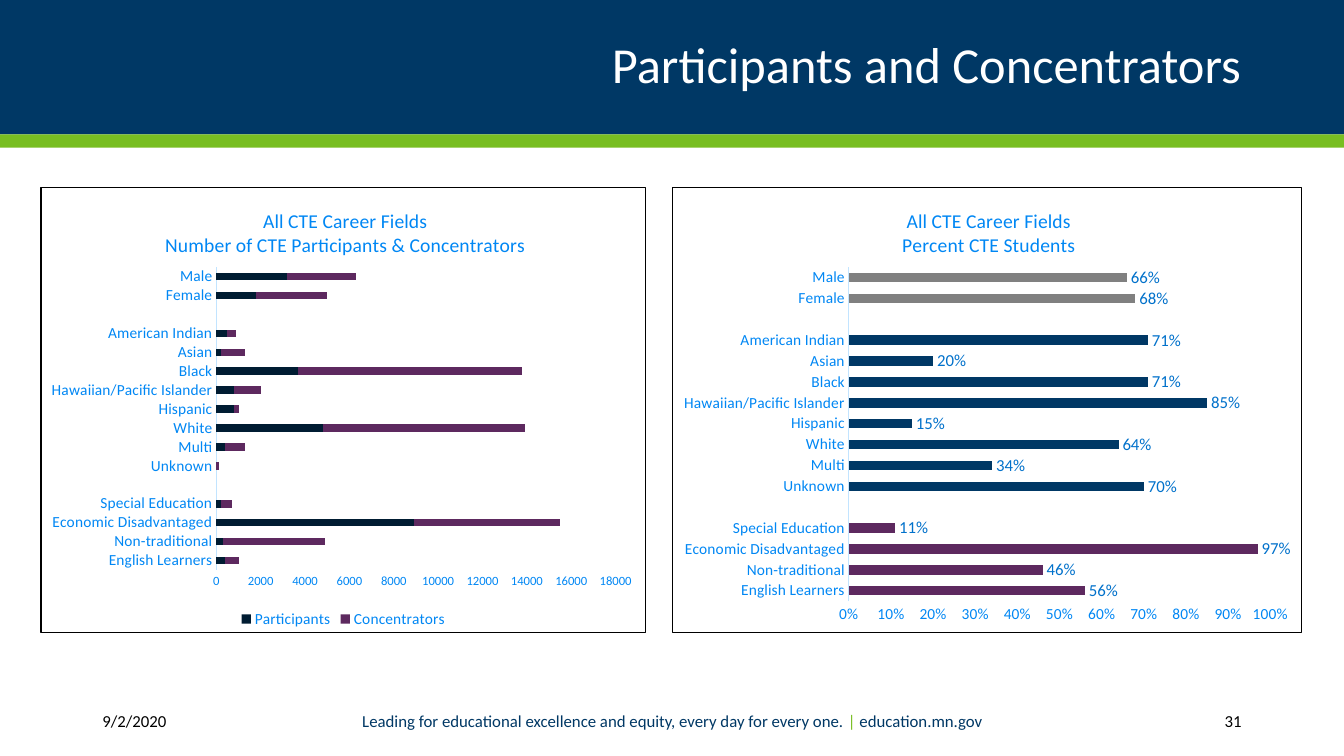
"""Build the slide on career and technical education participants and concentrators."""
import pptx
import pptx.chart.data
import pptx.dml.color
import pptx.enum.chart
import pptx.enum.shapes
import pptx.enum.text
import pptx.oxml
import pptx.oxml.ns
import pptx.util

Cm, Pt = pptx.util.Cm, pptx.util.Pt
Align = pptx.enum.text.PP_ALIGN
ChartType = pptx.enum.chart.XL_CHART_TYPE
qn = pptx.oxml.ns.qn

FONT = "Calibri"
COLORS = {
    "navy": "003865", "green": "78BE21", "white": "FFFFFF", "black": "000000",
    "ink": "001C32", "purple": "5D295F", "gray": "808080",
    "label": "0087F4", "value": "0071CB", "axis": "C2E4FF",
}
CATEGORIES = [
    "English Learners", "Non-traditional", "Economic Disadvantaged", "Special Education", "",
    "Unknown", "Multi", "White", "Hispanic", "Hawaiian/Pacific Islander", "Black", "Asian",
    "American Indian", "", "Female", "Male",
]
COUNTS = {
    "Participants": [400, 300, 8900, 200, None, 0, 400, 4800, 800, 800, 3700, 200, 500,
                     None, 1800, 3200],
    "Concentrators": [600, 4600, 6600, 500, None, 100, 900, 9100, 200, 1200, 10100, 1100, 400,
                      None, 3200, 3100],
}
PERCENTS = {
    "Series 1": [0.56, 0.46, 0.97, 0.11, None, 0.7, 0.34, 0.64, 0.15, 0.85, 0.71, 0.2, 0.71,
                 None, 0.68, 0.66],
}
POINT_COLORS = {0: "purple", 1: "purple", 2: "purple", 3: "purple", 14: "gray", 15: "gray"}


def rgb(name):
    """Return the named colour."""
    return pptx.dml.color.RGBColor.from_string(COLORS[name])


def paint(fill, color):
    """Give a fill one solid colour."""
    fill.solid()
    fill.fore_color.rgb = rgb(color)


def set_font(font, size, color):
    """Set typeface, size and colour."""
    font.name, font.size, font.bold = FONT, Pt(size), False
    font.color.rgb = rgb(color)


def add_run(p, text, size, color):
    """Add one formatted run to a paragraph."""
    r = p.add_run()
    r.text = text
    set_font(r.font, size, color)


def add_band(s, top, height, color):
    """Add a full-width colour band."""
    sp = s.shapes.add_shape(pptx.enum.shapes.MSO_SHAPE.RECTANGLE,
                            0, Cm(top), Cm(33.87), Cm(height))
    paint(sp.fill, color)
    sp.line.fill.background()
    sp.shadow.inherit = False


def fill_title(s, text):
    """Place and format the title in front of the bands."""
    sp = s.shapes.title
    sp.left, sp.top, sp.width, sp.height = Cm(2.33), Cm(0.42), Cm(29.21), Cm(2.54)
    sp.element.getparent().append(sp.element)
    sp.text_frame.vertical_anchor = pptx.enum.text.MSO_ANCHOR.MIDDLE
    p = sp.text_frame.paragraphs[0]
    p.alignment, p.line_spacing = Align.RIGHT, 0.9
    add_run(p, text, 36, "white")


def add_footer(s, left, width, align, runs):
    """Add one footer text of coloured runs."""
    sp = s.shapes.add_textbox(Cm(left), Cm(17.65), Cm(width), Cm(1.02))
    tf = sp.text_frame
    tf.word_wrap = True
    tf.vertical_anchor = pptx.enum.text.MSO_ANCHOR.MIDDLE
    p = tf.paragraphs[0]
    p.alignment = align
    for text, color in runs:
        add_run(p, text, 12, color)


def set_layout(parent, index, inner=False, **fractions):
    """Fix the place of a chart part as fractions of the chart."""
    for old in parent.findall(qn("c:layout")):
        parent.remove(old)
    target = '<c:layoutTarget val="inner"/>' if inner else ""
    modes = "".join(f'<c:{k}Mode val="edge"/>' for k in ("x", "y"))
    sizes = "".join(f'<c:{k} val="{v}"/>' for k, v in fractions.items())
    parent.insert(index, pptx.oxml.parse_xml(
        f'<c:layout {pptx.oxml.ns.nsdecls("c")}><c:manualLayout>'
        f'{target}{modes}{sizes}</c:manualLayout></c:layout>'))


def add_border(chart):
    """Frame the chart with a thin black line."""
    chart.element.find(qn("c:chart")).addnext(pptx.oxml.parse_xml(
        f'<c:spPr {pptx.oxml.ns.nsdecls("c", "a")}><a:noFill/><a:ln w="9525"><a:solidFill>'
        f'<a:srgbClr val="{COLORS["black"]}"/></a:solidFill></a:ln></c:spPr>'))


def format_axes(chart, value_size):
    """Format both axes without ticks or gridlines."""
    for axis, size in ((chart.category_axis, 11), (chart.value_axis, value_size)):
        axis.has_major_gridlines = False
        axis.major_tick_mark = axis.minor_tick_mark = pptx.enum.chart.XL_TICK_MARK.NONE
        set_font(axis.tick_labels.font, size, "label")
    line = chart.category_axis.format.line
    line.color.rgb, line.width = rgb("axis"), Pt(0.75)
    chart.value_axis.format.line.fill.background()


def add_bars(s, kind, left, width, title, title_x, plot, data, colors, gap, value_size):
    """Add a framed bar chart and return it."""
    cd = pptx.chart.data.CategoryChartData()
    cd.categories = CATEGORIES
    for name, values in data.items():
        cd.add_series(name, values)
    chart = s.shapes.add_chart(kind, Cm(left), Cm(4.7), Cm(width), Cm(11.25), cd).chart
    set_font(chart.font, 10, "navy")
    tf = chart.chart_title.text_frame
    for i, text in enumerate(title):
        p = tf.add_paragraph() if i else tf.paragraphs[0]
        p.alignment = Align.CENTER
        add_run(p, text, 14, "label")
    chart.chart_title.include_in_layout = False
    set_layout(chart.chart_title.element, 1, x=title_x, y=0.04)
    set_layout(chart.element.find(".//" + qn("c:plotArea")), 0, inner=True, **plot)
    bars = chart.plots[0]
    bars.gap_width, bars.vary_by_categories = gap, False
    for series, color in zip(bars.series, colors):
        paint(series.format.fill, color)
        series.invert_if_negative = False
    chart.has_legend = False
    format_axes(chart, value_size)
    add_border(chart)
    return chart


def add_count_chart(s):
    """Add the stacked chart of student numbers."""
    chart = add_bars(s, ChartType.BAR_STACKED, 1.02, 15.27,
                     ["All CTE Career Fields", "Number of CTE Participants & Concentrators"],
                     0.2, dict(x=0.29, y=0.18, w=0.66, h=0.68),
                     COUNTS, ["ink", "purple"], 150, 9)
    chart.plots[0].overlap = 100
    chart.has_legend = True
    chart.legend.position = pptx.enum.chart.XL_LEGEND_POSITION.BOTTOM
    chart.legend.include_in_layout = False
    set_font(chart.legend.font, 11, "label")


def add_percent_chart(s):
    """Add the chart of student shares with value labels."""
    chart = add_bars(s, ChartType.BAR_CLUSTERED, 16.94, 15.88,
                     ["All CTE Career Fields", "Percent CTE Students"],
                     0.36, dict(x=0.28, y=0.18, w=0.67, h=0.75),
                     PERCENTS, ["navy"], 120, 11)
    axis = chart.value_axis
    axis.minimum_scale, axis.maximum_scale, axis.major_unit = 0, 1, 0.1
    series = chart.plots[0].series[0]
    for i, color in POINT_COLORS.items():
        paint(series.points[i].format.fill, color)
    labels = series.data_labels
    labels.show_value = True
    labels.position = pptx.enum.chart.XL_LABEL_POSITION.OUTSIDE_END
    set_font(labels.font, 12, "value")
    for part in (axis.tick_labels, labels):
        part.number_format, part.number_format_is_linked = "0%", False


def main():
    """Build and save the slide."""
    prs = pptx.Presentation()
    prs.slide_width, prs.slide_height = Cm(33.87), Cm(19.05)
    s = prs.slides.add_slide(prs.slide_layouts[5])
    add_band(s, 0, 3.39, "navy")
    add_band(s, 3.39, 0.33, "green")
    fill_title(s, "Participants and Concentrators")
    add_footer(s, 2.33, 3.78, Align.LEFT, [("9/2/2020", "black")])
    add_footer(s, 27.48, 4.06, Align.RIGHT, [("31", "black")])
    add_footer(s, 8.03, 17.83, Align.CENTER, [
        ("Leading for educational excellence and equity, every day for every one. ", "navy"),
        ("| ", "green"), ("education.mn.gov", "navy")])
    add_count_chart(s)
    add_percent_chart(s)
    prs.save("out.pptx")


if __name__ == "__main__":
    main()
